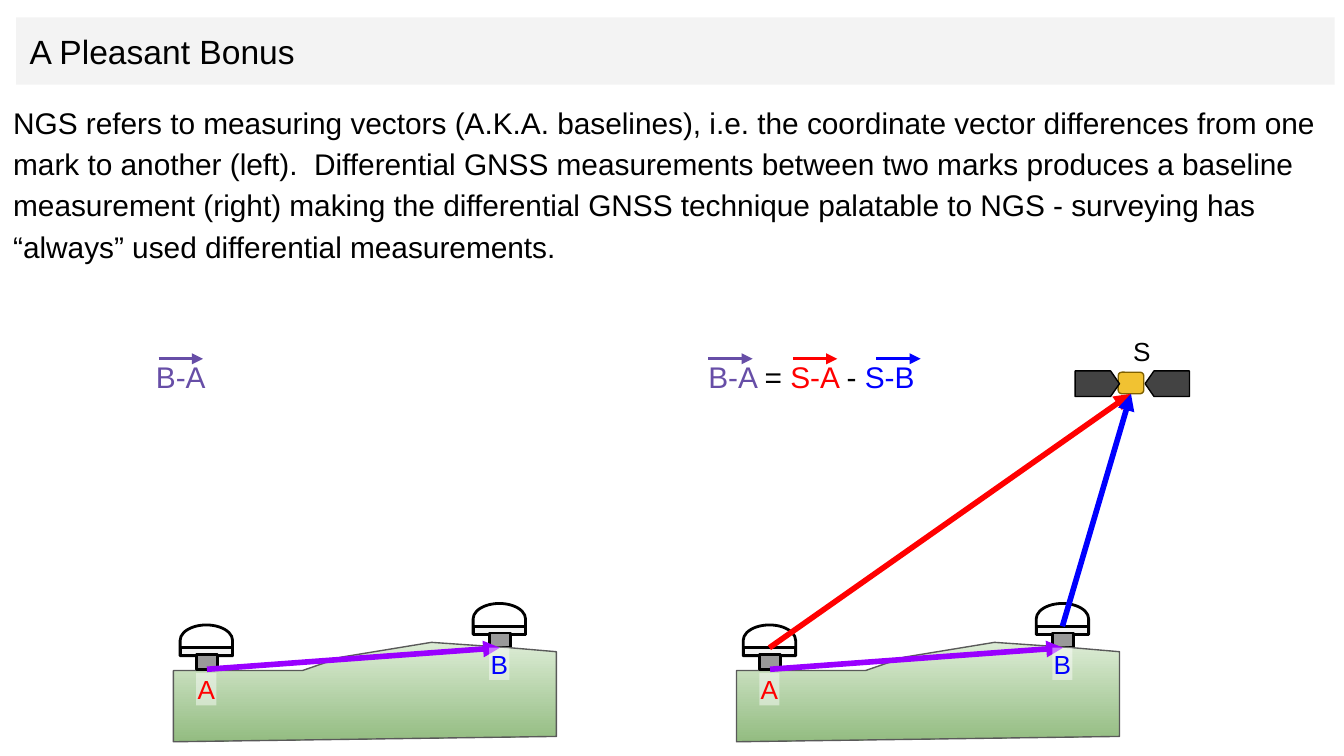
from typing import NamedTuple

from pptx import Presentation
from pptx.dml.color import RGBColor
from pptx.enum.shapes import MSO_CONNECTOR, MSO_SHAPE
from pptx.enum.text import MSO_ANCHOR, PP_ALIGN
from pptx.oxml.ns import qn
from pptx.util import Inches, Pt
from lxml import etree

RECT = MSO_SHAPE.RECTANGLE
ROUND = MSO_SHAPE.ROUNDED_RECTANGLE
DOME = MSO_SHAPE.FLOWCHART_DELAY
PANEL = MSO_SHAPE.FLOWCHART_OFFPAGE_CONNECTOR
LINE = MSO_CONNECTOR.STRAIGHT
LEFT, CENTER = PP_ALIGN.LEFT, PP_ALIGN.CENTER
TOP_ANCHOR, MIDDLE = MSO_ANCHOR.TOP, MSO_ANCHOR.MIDDLE
TOP, BOTTOM = 0, 2

BLACK, WHITE, PALE, GREY, DARK = "000000", "FFFFFF", "F3F3F3", "999999", "434343"
RED, BLUE, PURPLE, VIOLET = "FF0000", "0000FF", "674EA7", "9900FF"
GOLD, BROWN, EDGE = "F1C232", "7F6000", "595959"
SLOPE = ("DCECD5", "93BC81")
LAND = [(0, 4.99), (0.96, 4.99), (1.25, 4.89), (1.92, 4.78),
        (2.5, 4.82), (2.85, 4.85), (2.85, 5.48), (0, 5.52)]
BODY = (
    "NGS refers to measuring vectors (A.K.A. baselines), i.e. the coordinate vector "
    "differences from one mark to another (left).  Differential GNSS measurements "
    "between two marks produces a baseline measurement (right) making the differential "
    "GNSS technique palatable to NGS - surveying has “always” used differential "
    "measurements."
)


class Box(NamedTuple):
    x: float
    y: float
    w: float
    h: float


class Mark(NamedTuple):
    """A survey mark: its offset in the scene, plate top, label top and colour."""
    name: str
    dx: float
    y: float
    label: float
    color: str


class Arrow(NamedTuple):
    x: float
    color: str


MARK_A = Mark("A", 0.25, 4.82, 5.01, RED)
MARK_B = Mark("B", 2.43, 4.66, 4.82, BLUE)
ARROWS = [Arrow(1.18, PURPLE), Arrow(5.27, PURPLE), Arrow(5.9, RED), Arrow(6.52, BLUE)]


def rgb(color: str) -> RGBColor:
    return RGBColor.from_string(color)


def write(shape, *runs: tuple[str, str], size: float = 16, align=LEFT,
          anchor=MIDDLE, inset: float = 0, spacing: float = 1) -> None:
    """Fill a shape with one paragraph of (text, colour) runs."""
    frame = shape.text_frame
    frame.word_wrap = True
    frame.vertical_anchor = anchor
    frame.margin_left = frame.margin_right = Inches(inset)
    frame.margin_top = frame.margin_bottom = Inches(inset)
    para = frame.paragraphs[0]
    para.alignment, para.line_spacing = align, spacing
    for text, color in runs:
        run = para.add_run()
        run.text = text
        run.font.name, run.font.size = "Arial", Pt(size)
        run.font.color.rgb = rgb(color)


def place(shape, box: Box) -> None:
    shape.left, shape.top, shape.width, shape.height = map(Inches, box)


def add_part(slide, kind, box: Box, fill: str, edge: str = BLACK,
             width: float = 1.5, turn: float = 0):
    part = slide.shapes.add_shape(kind, *map(Inches, box))
    part.shadow.inherit = False
    part.fill.solid()
    part.fill.fore_color.rgb = rgb(fill)
    part.line.color.rgb = rgb(edge)
    part.line.width = Pt(width)
    part.rotation = turn
    return part


def add_label(slide, box: Box, *runs: tuple[str, str], size: float = 14,
              align=CENTER) -> None:
    """Draw text on a see-through white patch."""
    patch = add_part(slide, RECT, box, WHITE)
    patch.line.fill.background()
    color = patch.fill._xPr.find(qn("a:solidFill"))[0]
    etree.SubElement(color, qn("a:alpha"), val="46000")
    write(patch, *runs, size=size, align=align)


def add_arrow(slide, color: str, width: float, x1: float = 0, y1: float = 0,
              x2: float = 0, y2: float = 0):
    arrow = slide.shapes.add_connector(LINE, *map(Inches, (x1, y1, x2, y2)))
    arrow.line.color.rgb = rgb(color)
    arrow.line.width = Pt(width)
    etree.SubElement(arrow.line._get_or_add_ln(), qn("a:tailEnd"), type="triangle")
    etree.SubElement(arrow._element.spPr, qn("a:effectLst"))
    return arrow


def join(slide, start, side: int, end, color: str) -> None:
    """Run a vector from one side of a part to the bottom of another."""
    arrow = add_arrow(slide, color, 3)
    arrow.begin_connect(start, side)
    arrow.end_connect(end, BOTTOM)


def add_antenna(slide, left: float, mark: Mark):
    x, y = left + mark.dx, mark.y
    add_part(slide, DOME, Box(x - 0.12, y - 0.25, 0.23, 0.39), WHITE, turn=270)
    plate = add_part(slide, RECT, Box(x - 0.2, y, 0.39, 0.06), PALE)
    mast = add_part(slide, RECT, Box(x - 0.08, y + 0.05, 0.16, 0.11), GREY)
    return plate, mast


def add_ground(slide, left: float) -> None:
    points = [(Inches(left + dx), Inches(y)) for dx, y in LAND]
    path = slide.shapes.build_freeform(*points[0], scale=1)
    path.add_line_segments(points[1:], close=True)
    ground = path.convert_to_shape()
    ground.shadow.inherit = False
    ground.fill.gradient()
    ground.fill.gradient_angle = 270
    for stop, color in zip(ground.fill.gradient_stops, SLOPE):
        stop.color.rgb = rgb(color)
    ground.line.color.rgb = rgb(EDGE)
    ground.line.width = Pt(0.75)


def add_scene(slide, left: float, sat=None) -> None:
    """Draw both marks on the ground, with vectors to a satellite if given."""
    plate_b, mast_b = add_antenna(slide, left, MARK_B)
    add_ground(slide, left)
    plate_a, mast_a = add_antenna(slide, left, MARK_A)
    join(slide, mast_a, BOTTOM, mast_b, VIOLET)
    if sat is not None:
        join(slide, plate_a, TOP, sat, RED)
        join(slide, plate_b, TOP, sat, BLUE)
    for mark in (MARK_B, MARK_A):
        box = Box(left + mark.dx - 0.08, mark.label, 0.15, 0.24)
        add_label(slide, box, (mark.name, mark.color))


def add_sat(slide):
    body = add_part(slide, ROUND, Box(8.32, 2.77, 0.19, 0.16), GOLD, BROWN, 0.75)
    for x, turn in ((8.59, 90), (8.07, 270)):
        add_part(slide, PANEL, Box(x, 2.69, 0.19, 0.33), DARK, BLACK, 0.75, turn)
    return body


def main() -> None:
    deck = Presentation()
    deck.slide_width = Inches(10)
    deck.slide_height = deck.slide_width * 9 // 16
    slide = deck.slides.add_slide(deck.slide_layouts[5])

    title = slide.shapes.title
    place(title, Box(0.12, 0.13, 9.81, 0.5))
    title.fill.solid()
    title.fill.fore_color.rgb = rgb(PALE)
    write(title, ("A Pleasant Bonus", BLACK), size=18, inset=0.1)
    body = slide.shapes.add_textbox(*map(Inches, Box(0, 0.64, 10, 1.67)))
    write(body, (BODY, BLACK), anchor=TOP_ANCHOR, inset=0.1, spacing=1.15)

    add_scene(slide, 1.29)
    add_scene(slide, 5.48, add_sat(slide))
    add_label(slide, Box(8.42, 2.49, 0.15, 0.24), ("S", BLACK))
    add_label(slide, Box(1.15, 2.67, 0.39, 0.27), ("B-A", PURPLE), size=16)
    add_label(slide, Box(5.27, 2.67, 1.65, 0.27), ("B-A ", PURPLE), ("= ", BLACK),
              ("S-A ", RED), ("- ", BLACK), ("S-B", BLUE), size=16, align=LEFT)
    for x, color in ARROWS:
        add_arrow(slide, color, 1.5, x, 2.67, x + 0.33, 2.67)
    deck.save("out.pptx")


if __name__ == "__main__":
    main()
